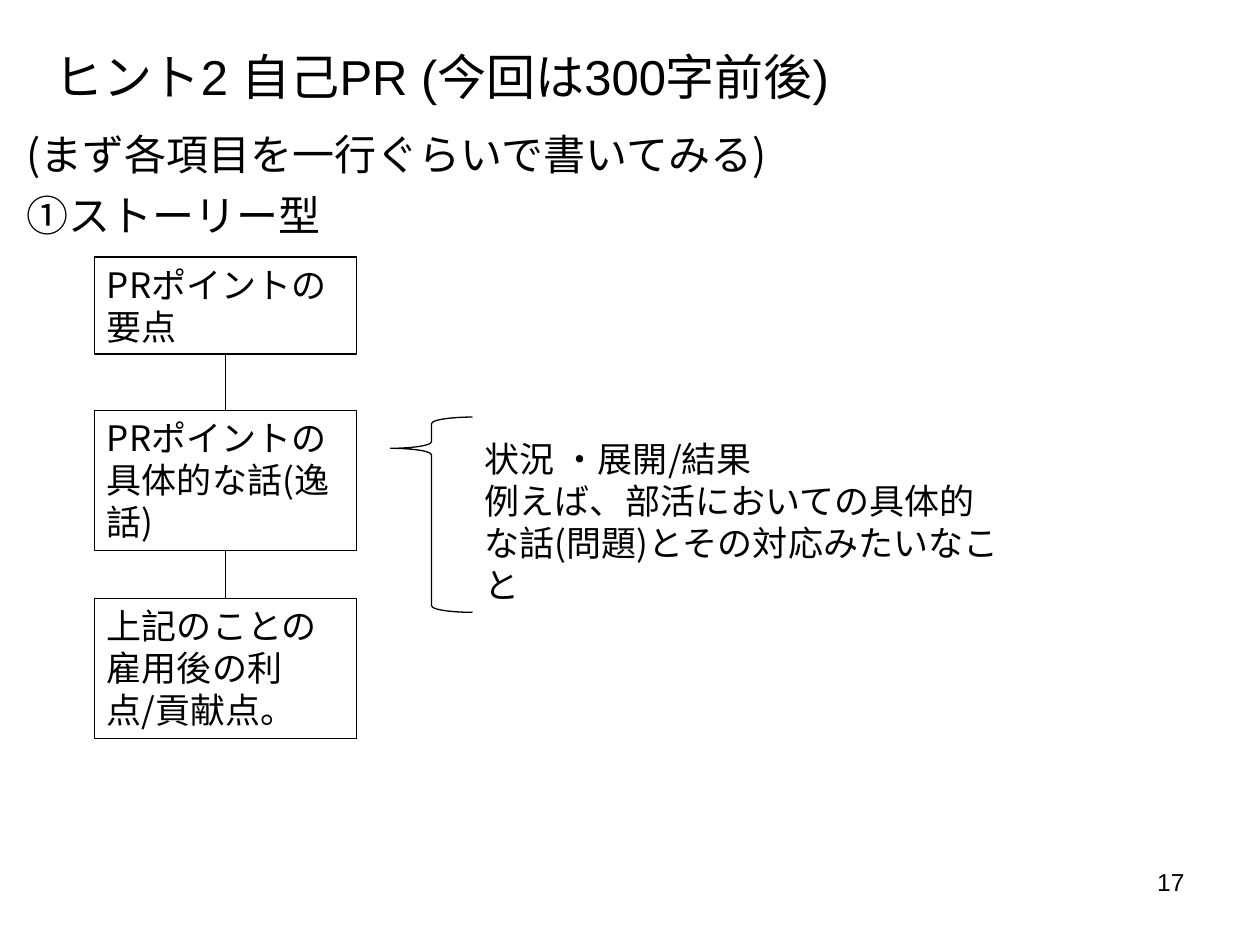
from itertools import pairwise

from lxml.etree import SubElement
from pptx import Presentation
from pptx.dml.color import RGBColor
from pptx.enum.shapes import MSO_CONNECTOR, MSO_SHAPE
from pptx.enum.text import MSO_ANCHOR, MSO_AUTO_SIZE, PP_ALIGN
from pptx.oxml.ns import qn
from pptx.util import Inches, Pt

COLOURS = {"ink": "000000", "paper": "FFFFFF"}
LATIN, JAPANESE = "Arial", "Noto Sans CJK JP"
LINE_WIDTH = Pt(0.75)


def colour(name):
    """Return the named colour."""
    return RGBColor.from_string(COLOURS[name])


def inches(box):
    """Convert a left, top, width, height box to lengths."""
    return [Inches(value) for value in box]


def write(shape, lines, size, font=JAPANESE, align=PP_ALIGN.LEFT, anchor=MSO_ANCHOR.TOP):
    """Fill a shape with one formatted paragraph per line."""
    frame = shape.text_frame
    frame.text = "\n".join(lines)
    frame.word_wrap = True
    frame.auto_size = MSO_AUTO_SIZE.NONE
    frame.vertical_anchor = anchor
    for para in frame.paragraphs:
        para.alignment = align
        para.font.size = Pt(size)
        para.font.name = font
        para.font.color.rgb = colour("ink")
        defaults = para._p.get_or_add_pPr().get_or_add_defRPr()
        SubElement(defaults, qn("a:ea")).set("typeface", JAPANESE)


def outline(shape):
    """Give a shape a thin line with no fill or shadow."""
    shape.shadow.inherit = False
    shape.fill.background()
    shape.line.color.rgb = colour("ink")
    shape.line.width = LINE_WIDTH


def place(shape, box):
    """Move a placeholder into a box."""
    shape.left, shape.top, shape.width, shape.height = inches(box)


def add_heading(page, box, text):
    """Place the title."""
    place(page.shapes.title, box)
    write(page.shapes.title, [text], 28, LATIN, anchor=MSO_ANCHOR.BOTTOM)


def add_introduction(page, box, lines):
    """Place the unbulleted body lines."""
    body = page.placeholders[1]
    place(body, box)
    write(body, lines, 24)
    for para in body.text_frame.paragraphs:
        para.line_spacing = 1.2
        para.space_before = Pt(0)
        properties = para._p.get_or_add_pPr()
        properties.set("marL", "0")
        properties.set("indent", "0")
        bullet = SubElement(properties, qn("a:buNone"))
        properties.find(qn("a:defRPr")).addprevious(bullet)


def add_text(page, box, lines, size, **style):
    """Place a wrapped text box."""
    write(page.shapes.add_textbox(*inches(box)), lines, size, **style)


def add_story(page, left, width, steps):
    """Stack the story steps and join each to the next."""
    boxes = []
    for top, height, text in steps:
        box = page.shapes.add_shape(MSO_SHAPE.RECTANGLE, *inches((left, top, width, height)))
        outline(box)
        write(box, [text], 20)
        boxes.append(box)
    for upper, lower in pairwise(boxes):
        link = page.shapes.add_connector(MSO_CONNECTOR.STRAIGHT, 0, 0, 0, 0)
        link.begin_connect(upper, 2)
        link.end_connect(lower, 0)
        link.line.color.rgb = colour("ink")
        link.line.width = LINE_WIDTH
        SubElement(link._element.spPr, qn("a:effectLst"))


def add_brace(page, box):
    """Place the brace that opens the example."""
    brace = page.shapes.add_shape(MSO_SHAPE.LEFT_BRACE, *inches(box))
    brace.adjustments[0] = 0.08
    brace.adjustments[1] = 0.16
    outline(brace)


def main():
    """Build and save the slide."""
    deck = Presentation()
    deck.slide_width, deck.slide_height = Inches(10), Inches(7.5)
    page = deck.slides.add_slide(deck.slide_layouts[1])
    page.background.fill.solid()
    page.background.fill.fore_color.rgb = colour("paper")
    add_heading(page, (0.33, 0.22, 8.5, 0.67), "ヒント2 自己PR (今回は300字前後)")
    add_introduction(page, (0.11, 0.89, 9.59, 1.56),
                     ["(まず各項目を一行ぐらいで書いてみる)", "①ストーリー型"])
    add_story(page, 0.75, 2.08, [
        (2.04, 0.77, "PRポイントの要点"),
        (3.26, 1.11, "PRポイントの具体的な話(逸話)"),
        (4.75, 1.11, "上記のことの雇用後の利点/貢献点。"),
    ])
    add_brace(page, (3.1, 3.31, 0.65, 1.55))
    add_text(page, (3.75, 3.42, 4.33, 1.45),
             ["状況 ・展開/結果", "例えば、部活においての具体的な話(問題)とその対応みたいなこと"], 20)
    add_text(page, (7.17, 6.83, 2.33, 0.52), ["17"], 14, font=LATIN, align=PP_ALIGN.RIGHT)
    deck.save("out.pptx")


if __name__ == "__main__":
    main()
